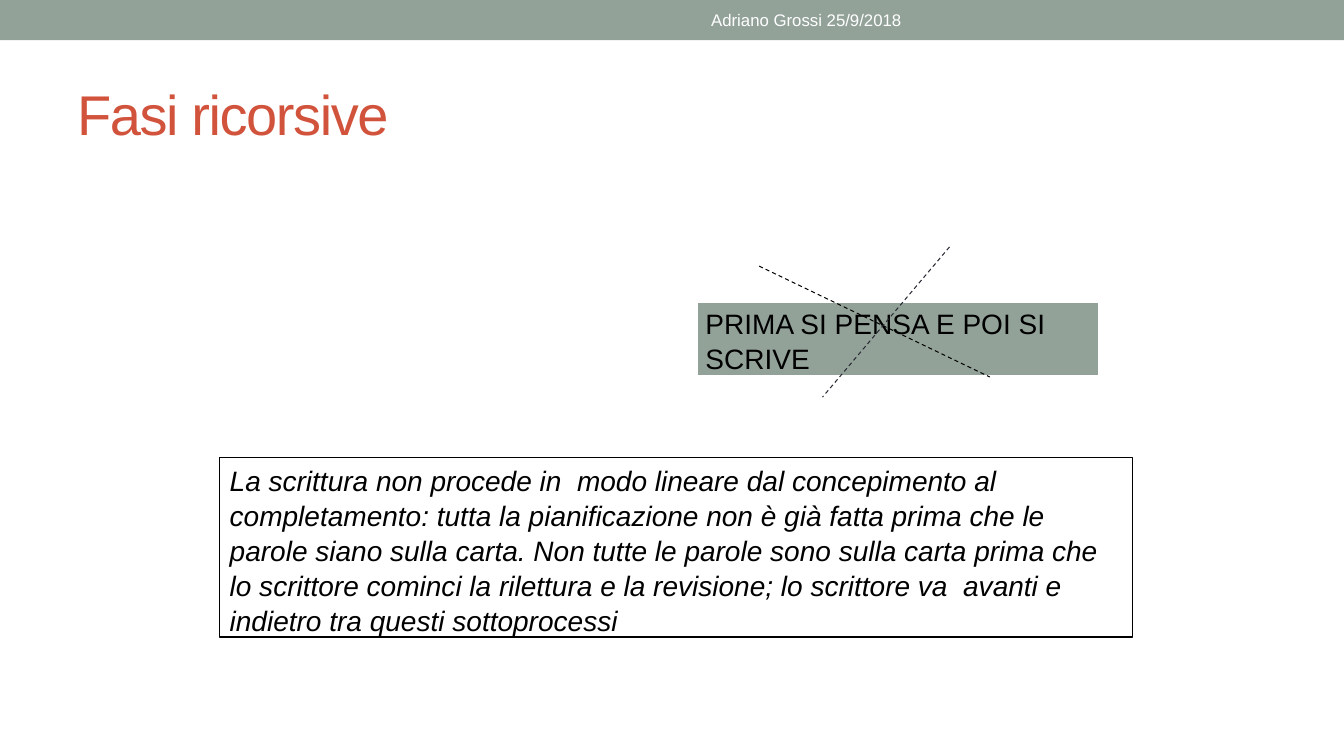
"""Build the slide "Fasi ricorsive" on a grid of 100 columns by 100 rows."""
from pptx import Presentation
from pptx import util as u
from pptx.dml.color import RGBColor
from pptx.enum import dml, shapes, text
from pptx.oxml.ns import qn
from lxml import etree

SAGE = RGBColor(0x93, 0xA2, 0x99)
RUST = RGBColor(0xD2, 0x53, 0x3C)
INK = RGBColor(0x29, 0x29, 0x34)
BLACK = RGBColor(0, 0, 0)
WHITE = RGBColor(0xFF, 0xFF, 0xFF)
TOP, MIDDLE = text.MSO_ANCHOR.TOP, text.MSO_ANCHOR.MIDDLE
LEFT, CENTER = text.PP_ALIGN.LEFT, text.PP_ALIGN.CENTER
GROW = text.MSO_AUTO_SIZE.SHAPE_TO_FIT_TEXT

presentation = Presentation()
presentation.slide_width = u.Inches(13.33)
presentation.slide_height = u.Inches(7.5)
slide = presentation.slides.add_slide(presentation.slide_layouts[6])


def grid(*lengths):
    """Turn alternating columns and rows into slide lengths."""
    sides = (presentation.slide_width, presentation.slide_height)
    return [round(length * sides[i % 2] / 100) for i, length in enumerate(lengths)]


def write(shape, words, alignment, frame_format, font_format, color):
    """Put one formatted paragraph into a shape."""
    frame = shape.text_frame
    for name, value in frame_format.items():
        setattr(frame, name, value)
    paragraph = frame.paragraphs[0]
    paragraph.alignment = alignment
    run = paragraph.add_run()
    run.text = words
    for name, value in font_format.items():
        setattr(run.font, name, value)
    run.font.color.rgb = color
    return paragraph


bar = slide.shapes.add_shape(shapes.MSO_SHAPE.RECTANGLE, *grid(0, 0, 100, 5.33))
bar.shadow.inherit = False
bar.fill.solid()
bar.fill.fore_color.rgb = SAGE
bar.line.fill.background()

centered_frame = {"word_wrap": True, "vertical_anchor": MIDDLE}
title = slide.shapes.add_textbox(*grid(5, 7.73, 90, 14.4))
heading = write(title, "Fasi ricorsive", LEFT, centered_frame,
                {"name": "Arial", "size": u.Pt(40)}, RUST)
heading.runs[0].font._element.set("spc", "-100")

boxes = [
    ((16.35, 60.53, 67.95, 23.73), None, BLACK, 0.75, True,
     "La scrittura non procede in  modo lineare dal concepimento al completamento: "
     "tutta la pianificazione non è già fatta prima che le parole siano sulla carta. "
     "Non tutte le parole sono sulla carta prima che lo scrittore cominci la rilettura "
     "e la revisione; lo scrittore va  avanti e indietro tra questi sottoprocessi"),
    ((51.75, 39.73, 30.15, 10.27), SAGE, WHITE, 3.5, False,
     "PRIMA SI PENSA E POI SI SCRIVE"),
]
for place, fill, outline, weight, italic, words in boxes:
    box = slide.shapes.add_shape(shapes.MSO_SHAPE.RECTANGLE, *grid(*place))
    box.shadow.inherit = False
    if fill is None:
        box.fill.background()
    else:
        box.fill.solid()
        box.fill.fore_color.rgb = fill
    box.line.color.rgb = outline
    box.line.width = u.Pt(weight)
    paragraph = write(box, words, LEFT,
                      {"word_wrap": True, "vertical_anchor": TOP, "auto_size": GROW},
                      {"name": "Arial", "size": u.Pt(20), "italic": italic}, BLACK)
    paragraph.line_spacing = 1.04

strokes = [
    ((56.48, 35.2, 73.65, 49.87), BLACK),
    ((70.65, 32.67, 61.2, 52.53), INK),
]
for ends, color in strokes:
    stroke = slide.shapes.add_connector(shapes.MSO_CONNECTOR.STRAIGHT, *grid(*ends))
    stroke.line.color.rgb = color
    stroke.line.width = u.Pt(0.75)
    stroke.line.dash_style = dml.MSO_LINE.DASH
    etree.SubElement(stroke._element.spPr, qn("a:effectLst"))

author = slide.shapes.add_textbox(*grid(37.5, 0.27, 45, 4.8))
write(author, "Adriano Grossi 25/9/2018", CENTER, centered_frame,
      {"name": "Arial", "size": u.Pt(12)}, WHITE)

presentation.save("out.pptx")
